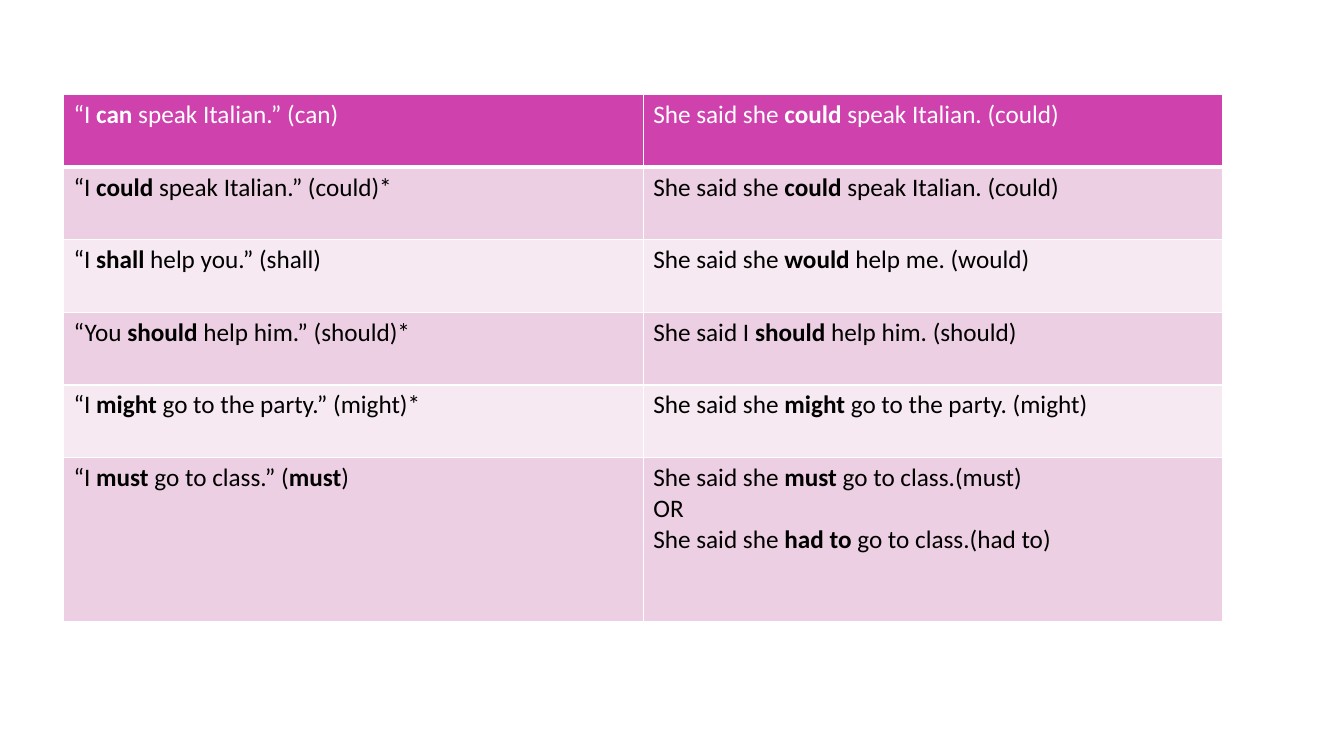
from dataclasses import dataclass

from lxml import etree
from pptx import Presentation
from pptx import util as u
from pptx.dml.color import RGBColor
from pptx.oxml import ns

WHITE = RGBColor(0xFF, 0xFF, 0xFF)
BLACK = RGBColor(0x00, 0x00, 0x00)
MAGENTA = RGBColor(0xCF, 0x41, 0xAD)
PINK = RGBColor(0xED, 0xCF, 0xE3)
PALE_PINK = RGBColor(0xF6, 0xE9, 0xF1)

# Grid, in inches
LEFT, TOP = 0.63, 0.94
COLUMN_WIDTH = 5.75
ROW_HEIGHT, LAST_ROW_HEIGHT = 0.72, 1.63
THIN, THICK = 1, 3


@dataclass(frozen=True)
class Example:
    """Direct and reported speech; bold words stand between bars."""
    direct: str
    reported: str


EXAMPLES = [
    Example("“I |can| speak Italian.” (can)",
            "She said she |could| speak Italian. (could)"),
    Example("“I |could| speak Italian.” (could)*",
            "She said she |could| speak Italian. (could)"),
    Example("“I |shall| help you.” (shall)",
            "She said she |would| help me. (would)"),
    Example("“You |should| help him.” (should)*",
            "She said I |should| help him. (should)"),
    Example("“I |might| go to the party.” (might)*",
            "She said she |might| go to the party. (might)"),
    Example("“I |must| go to class.” (|must|)",
            "She said she |must| go to class.(must)\n"
            "OR\n"
            "She said she |had to |go to class.(had to)"),
]


def write_text(cell, content: str, color: RGBColor) -> None:
    frame = cell.text_frame
    for index, line in enumerate(content.split("\n")):
        para = frame.add_paragraph() if index else frame.paragraphs[0]
        para.font.name = "Calibri"
        para.font.size = u.Pt(18)
        para.font.color.rgb = color
        for position, words in enumerate(line.split("|")):
            span = para.add_run()
            span.text = words
            span.font.bold = position % 2 == 1


def set_borders(cell, top: float, bottom: float) -> None:
    properties = cell._tc.get_or_add_tcPr()
    widths = {"lnL": THIN, "lnR": THIN, "lnT": top, "lnB": bottom}
    for index, (side, width) in enumerate(widths.items()):
        line = etree.Element(ns.qn(f"a:{side}"), w=str(u.Pt(width)))
        fill = etree.SubElement(line, ns.qn("a:solidFill"))
        etree.SubElement(fill, ns.qn("a:srgbClr"), val=str(WHITE))
        properties.insert(index, line)


def row_fill(row: int) -> RGBColor:
    if row == 0:
        return MAGENTA
    return PINK if row % 2 else PALE_PINK


def add_speech_table(page, examples: list[Example]) -> None:
    heights = [ROW_HEIGHT] * (len(examples) - 1) + [LAST_ROW_HEIGHT]
    table = page.shapes.add_table(
        len(examples), 2, u.Inches(LEFT), u.Inches(TOP),
        u.Inches(2 * COLUMN_WIDTH), u.Inches(sum(heights))).table
    for column in table.columns:
        column.width = u.Inches(COLUMN_WIDTH)
    for row, (example, height) in enumerate(zip(examples, heights)):
        table.rows[row].height = u.Inches(height)
        for column, content in enumerate((example.direct, example.reported)):
            cell = table.cell(row, column)
            cell.fill.solid()
            cell.fill.fore_color.rgb = row_fill(row)
            write_text(cell, content, BLACK if row else WHITE)
            # The rule under the first row is thicker
            set_borders(cell, THICK if row == 1 else THIN,
                        THICK if row == 0 else THIN)


def main() -> None:
    deck = Presentation()
    deck.slide_width, deck.slide_height = u.Inches(13.33), u.Inches(7.5)
    page = deck.slides.add_slide(deck.slide_layouts[6])
    add_speech_table(page, EXAMPLES)
    deck.save("out.pptx")


if __name__ == "__main__":
    main()
